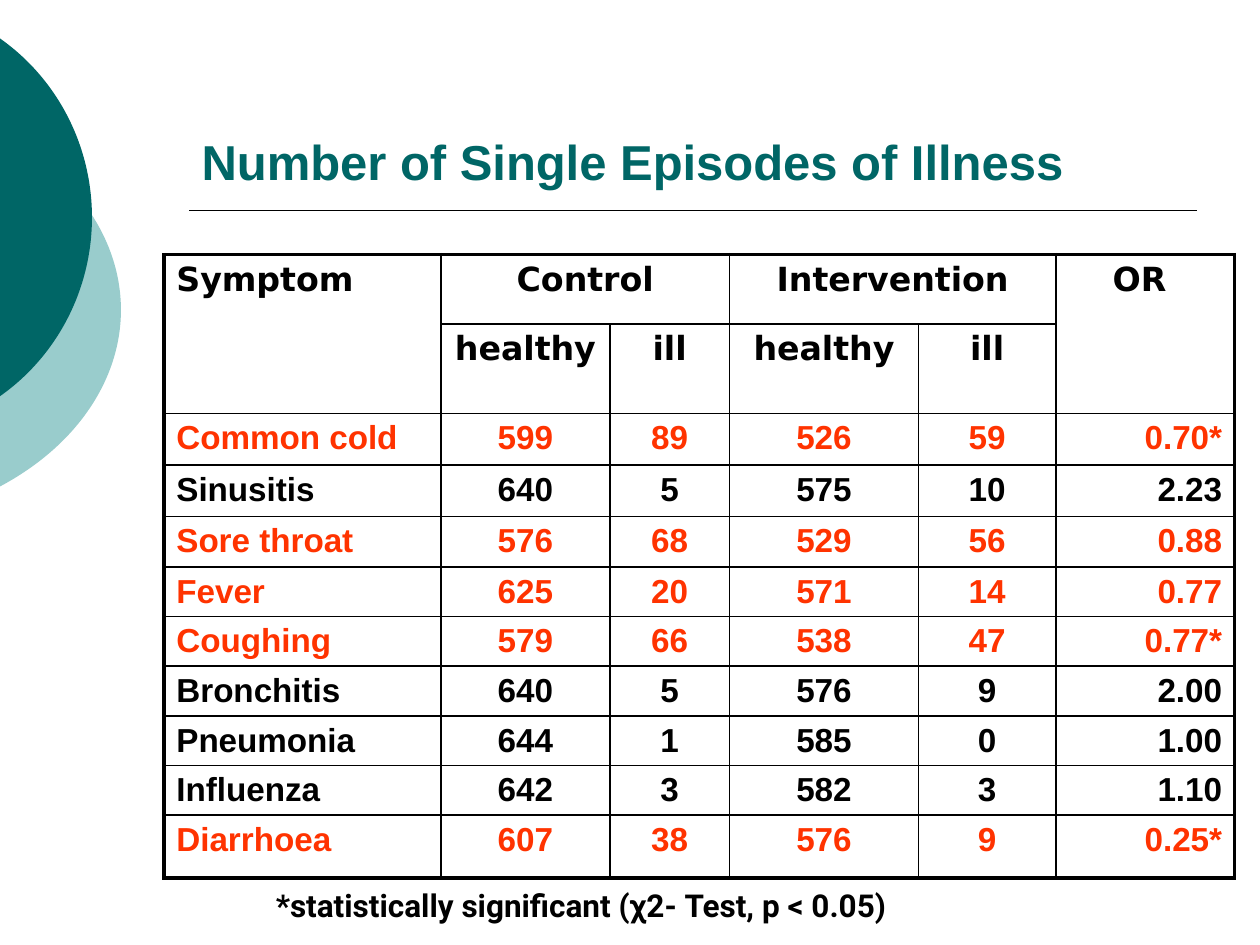
from itertools import product
from lxml import etree
from pptx import Presentation
from pptx.dml.color import RGBColor
from pptx.enum import shapes, text
from pptx.oxml.ns import qn
from pptx.util import Inches, Pt

# Content
TITLE = "Number of Single Episodes of Illness"
FOOTNOTE = "*statistically significant (χ2- Test, p < 0.05)"
HEADER = [
    ["Symptom", "Control", "", "Intervention", "", "OR "],
    ["", "healthy", "ill", "healthy", "ill", ""],
]
ILLNESSES = [
    ["Common cold", "599", "89", "526", "59", "0.70*"],
    ["Sinusitis", "640", "5", "575", "10", "2.23"],
    ["Sore throat", "576", "68", "529", "56", "0.88"],
    ["Fever", "625", "20", "571", "14", "0.77"],
    ["Coughing", "579", "66", "538", "47", "0.77*"],
    ["Bronchitis", "640", "5", "576", "9", "2.00"],
    ["Pneumonia", "644", "1", "585", "0", "1.00"],
    ["Influenza", "642", "3", "582", "3", "1.10"],
    ["Diarrhoea", "607", "38", "576", "9", "0.25*"],
]
HIGHLIGHTED = {"Common cold", "Sore throat", "Fever", "Coughing", "Diarrhoea"}
MERGES = [((0, 0), (1, 0)), ((0, 1), (0, 2)), ((0, 3), (0, 4)), ((0, 5), (1, 5))]
COLUMN_WIDTHS = [2.2, 1.34, 0.95, 1.5, 1.09, 1.42]
ROW_HEIGHTS = [0.55, 0.71, 0.41, 0.41, 0.4, 0.39, 0.39, 0.39, 0.39, 0.39, 0.5]

THEME = {
    "teal": "006666", "light": "99CCCC", "black": "000000", "red": "FF3300",
    "body": "Arial", "header": "DejaVu Sans", "note": "Roboto",
    "title_size": 28, "table_size": 19, "note_size": 18,
    "thin": 1, "thick": 2.25,
}
# Left, top, width, height, colour of the discs that bleed off the left edge
DISCS = [(-3.54, 0.75, 4.5, 3.42, "light"), (-2.65, 0, 3.38, 3.45, "teal")]


def color(name):
    return RGBColor.from_string(THEME[name])


def write(text_frame, words, font, size, color_name, align=text.PP_ALIGN.LEFT):
    text_frame.text = words
    paragraph = text_frame.paragraphs[0]
    paragraph.alignment = align
    for run in paragraph.runs:
        run.font.name = THEME[font]
        run.font.size = Pt(THEME[size])
        run.font.bold = True
        run.font.color.rgb = color(color_name)


def add_disc(slide, left, top, width, height, color_name):
    shape = slide.shapes.add_shape(
        shapes.MSO_SHAPE.OVAL, Inches(left), Inches(top), Inches(width), Inches(height))
    shape.shadow.inherit = False
    shape.fill.solid()
    shape.fill.fore_color.rgb = color(color_name)
    shape.line.fill.background()


def set_borders(cell, thick_edges):
    properties = cell._tc.get_or_add_tcPr()
    for edge in "LRTB":
        weight = THEME["thick" if edge in thick_edges else "thin"]
        line = etree.SubElement(properties, qn(f"a:ln{edge}"), w=str(Pt(weight)))
        fill = etree.SubElement(line, qn("a:solidFill"))
        etree.SubElement(fill, qn("a:srgbClr"), val=THEME["black"])


def add_illness_table(slide):
    rows = HEADER + ILLNESSES
    row_count, column_count = len(rows), len(COLUMN_WIDTHS)
    table = slide.shapes.add_table(
        row_count, column_count, Inches(1.3), Inches(2.02),
        Inches(sum(COLUMN_WIDTHS)), Inches(sum(ROW_HEIGHTS))).table
    table.first_row = table.horz_banding = False
    for column, width in zip(table.columns, COLUMN_WIDTHS):
        column.width = Inches(width)
    for row, height in zip(table.rows, ROW_HEIGHTS):
        row.height = Inches(height)

    for r, c in product(range(row_count), range(column_count)):
        cell = table.cell(r, c)
        is_header = r < len(HEADER)
        outer = {"L": c == 0, "R": c == column_count - 1,
                 "T": r == 0, "B": r == row_count - 1}
        set_borders(cell, [edge for edge, is_outer in outer.items() if is_outer])
        cell.fill.background()
        if c == 0:
            align = text.PP_ALIGN.LEFT
        elif outer["R"] and not is_header:
            align = text.PP_ALIGN.RIGHT
        else:
            align = text.PP_ALIGN.CENTER
        write(cell.text_frame, rows[r][c], "header" if is_header else "body",
              "table_size", "red" if rows[r][0] in HIGHLIGHTED else "black", align)
    for first, last in MERGES:
        table.cell(*first).merge(table.cell(*last))


def main():
    presentation = Presentation()
    presentation.slide_width, presentation.slide_height = Inches(10), Inches(7.5)
    slide = presentation.slides.add_slide(presentation.slide_layouts[5])

    # Corner discs and title rule
    for disc in DISCS:
        add_disc(slide, *disc)
    rule = slide.shapes.add_connector(
        shapes.MSO_CONNECTOR.STRAIGHT, Inches(1.5), Inches(1.67), Inches(9.5), Inches(1.67))
    rule.line.color.rgb = color("black")
    rule.line.width = Pt(THEME["thin"])
    etree.SubElement(rule._element.spPr, qn("a:effectLst"))

    # Title
    title = slide.shapes.title
    title.left, title.top = Inches(1.5), Inches(0.33)
    title.width, title.height = Inches(8), Inches(1.25)
    title.text_frame.vertical_anchor = text.MSO_ANCHOR.BOTTOM
    title.text_frame.margin_bottom = Inches(0.07)
    write(title.text_frame, TITLE, "body", "title_size", "teal")

    # Table and footnote
    add_illness_table(slide)
    note = slide.shapes.add_textbox(Inches(2.09), Inches(6.98), Inches(5.78), Inches(0.4))
    note.text_frame.word_wrap = False
    write(note.text_frame, FOOTNOTE, "note", "note_size", "black")

    presentation.save("out.pptx")


if __name__ == "__main__":
    main()
